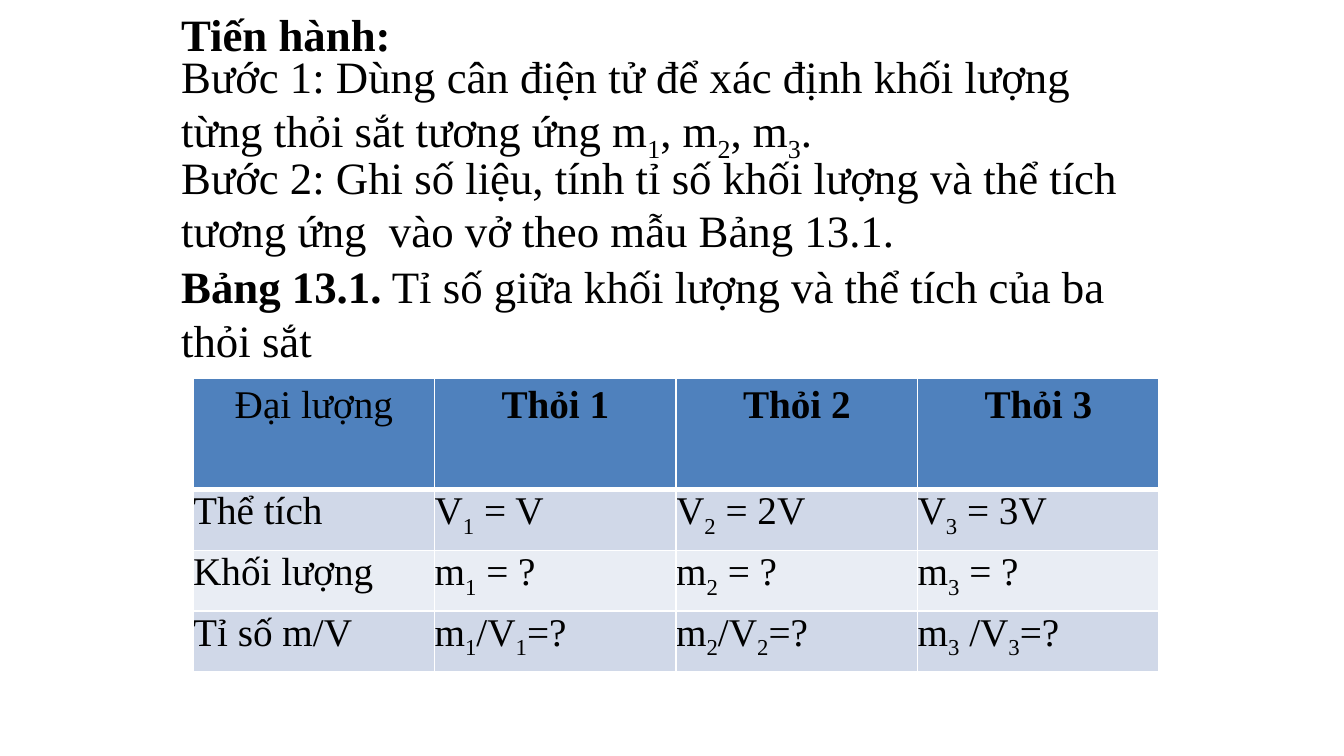
from lxml import etree
from pptx import Presentation
from pptx.dml.color import RGBColor
from pptx.enum.text import MSO_AUTO_SIZE, PP_ALIGN
from pptx.oxml.ns import qn
from pptx.util import Pt

GROW = MSO_AUTO_SIZE.SHAPE_TO_FIT_TEXT
CENTER, JUSTIFY = PP_ALIGN.CENTER, PP_ALIGN.JUSTIFY

BLACK = RGBColor(0x00, 0x00, 0x00)
WHITE = RGBColor(0xFF, 0xFF, 0xFF)
HEADER_BLUE = RGBColor(0x4F, 0x81, 0xBD)
BAND_DARK = RGBColor(0xD0, 0xD8, 0xE8)
BAND_LIGHT = RGBColor(0xE9, 0xED, 0xF4)

EMU_PER_PX = 9525
BLANK_LAYOUT = 6
SUBSCRIPT_BASELINE = "-25000"
BORDER_TAGS = ("a:lnL", "a:lnR", "a:lnT", "a:lnB")


def px(length):
    return length * EMU_PER_PX


class LessonSlide:
    """Holds the text style and the slide being filled."""

    font_name = "Times New Roman"
    body_size = Pt(24)
    table_size = Pt(21)

    def __init__(self, presentation):
        self.slide = presentation.slides.add_slide(
            presentation.slide_layouts[BLANK_LAYOUT])

    def add_runs(self, paragraph, text, size, bold=False):
        """Add text in which each subscript stands between underscores."""
        style = {"name": self.font_name, "size": size, "bold": bold}
        for index, part in enumerate(text.split("_")):
            if not part:
                continue
            run = paragraph.add_run()
            run.text = part
            for name, value in style.items():
                setattr(run.font, name, value)
            run.font.color.rgb = BLACK
            if index % 2:
                run.font._element.set("baseline", SUBSCRIPT_BASELINE)

    def text_box(self, left, top, width, height, lead="", text="", wrap=True):
        shape = self.slide.shapes.add_textbox(
            px(left), px(top), px(width), px(height))
        frame = shape.text_frame
        frame.word_wrap = wrap
        frame.auto_size = GROW
        paragraph = frame.paragraphs[0]
        self.add_runs(paragraph, lead, self.body_size, bold=True)
        self.add_runs(paragraph, text, self.body_size)

    def cell_borders(self, cell, bottom_width):
        properties = cell._tc.get_or_add_tcPr()
        for index, tag in enumerate(BORDER_TAGS):
            width = bottom_width if tag == "a:lnB" else Pt(1)
            line = etree.Element(qn(tag), w=str(width))
            fill = etree.SubElement(line, qn("a:solidFill"))
            etree.SubElement(fill, qn("a:srgbClr"), val=str(WHITE))
            properties.insert(index, line)

    def fill_cell(self, cell, text, header, bold, color):
        margins = (7, 4) if header else (0, 0)
        for side, margin in zip(("left", "top", "right", "bottom"), margins * 2):
            setattr(cell, f"margin_{side}", px(margin))
        cell.fill.solid()
        cell.fill.fore_color.rgb = color
        self.cell_borders(cell, Pt(3) if header else Pt(1))
        paragraph = cell.text_frame.paragraphs[0]
        paragraph.alignment = CENTER if header else JUSTIFY
        self.add_runs(paragraph, text, self.table_size, bold)

    def table(self, left, top, width, height, header_height, rows):
        row_count, column_count = len(rows), len(rows[0])
        table = self.slide.shapes.add_table(
            row_count, column_count,
            px(left), px(top), px(width), px(height)).table
        for column in table.columns:
            column.width = px(width) // column_count
        for row_index, texts in enumerate(rows):
            header = row_index == 0
            if header:
                table.rows[row_index].height = px(header_height)
                color = HEADER_BLUE
            else:
                table.rows[row_index].height = (
                    px(height - header_height) // (row_count - 1))
                color = BAND_DARK if row_index % 2 else BAND_LIGHT
            for column_index, text in enumerate(texts):
                self.fill_cell(table.cell(row_index, column_index), text,
                               header, header and column_index > 0, color)


def main():
    presentation = Presentation()
    presentation.slide_width, presentation.slide_height = px(960), px(540)
    lesson = LessonSlide(presentation)

    # Procedure steps
    lesson.text_box(120, 0, 171, 48, lead="Tiến hành:", wrap=False)
    lesson.text_box(
        120, 30, 720, 87,
        text="Bước 1: Dùng cân điện tử để xác định khối lượng từng thỏi sắt "
             "tương ứng m_1_, m_2_, m_3_.")
    lesson.text_box(
        120, 102, 720, 87,
        text="Bước 2: Ghi số liệu, tính tỉ số khối lượng và thể tích "
             "tương ứng  vào vở theo mẫu Bảng 13.1.")

    # Table caption
    lesson.text_box(
        120, 180, 720, 87, lead="Bảng 13.1.",
        text=" Tỉ số giữa khối lượng và thể tích của ba thỏi sắt")

    # Measurement table
    bars = (1, 2, 3)
    volumes = ("V", "2V", "3V")
    slashes = ("/", "/", " /")
    rows = [
        ["Đại lượng"] + [f"Thỏi {bar}" for bar in bars],
        ["Thể tích"] + [f"V_{bar}_ = {volume}"
                        for bar, volume in zip(bars, volumes)],
        ["Khối lượng"] + [f"m_{bar}_ = ?" for bar in bars],
        ["Tỉ số m/V"] + [f"m_{bar}_{slash}V_{bar}_=?"
                         for bar, slash in zip(bars, slashes)],
    ]
    lesson.table(138, 270, 690, 210, 80, rows)

    presentation.save("out.pptx")


if __name__ == "__main__":
    main()
